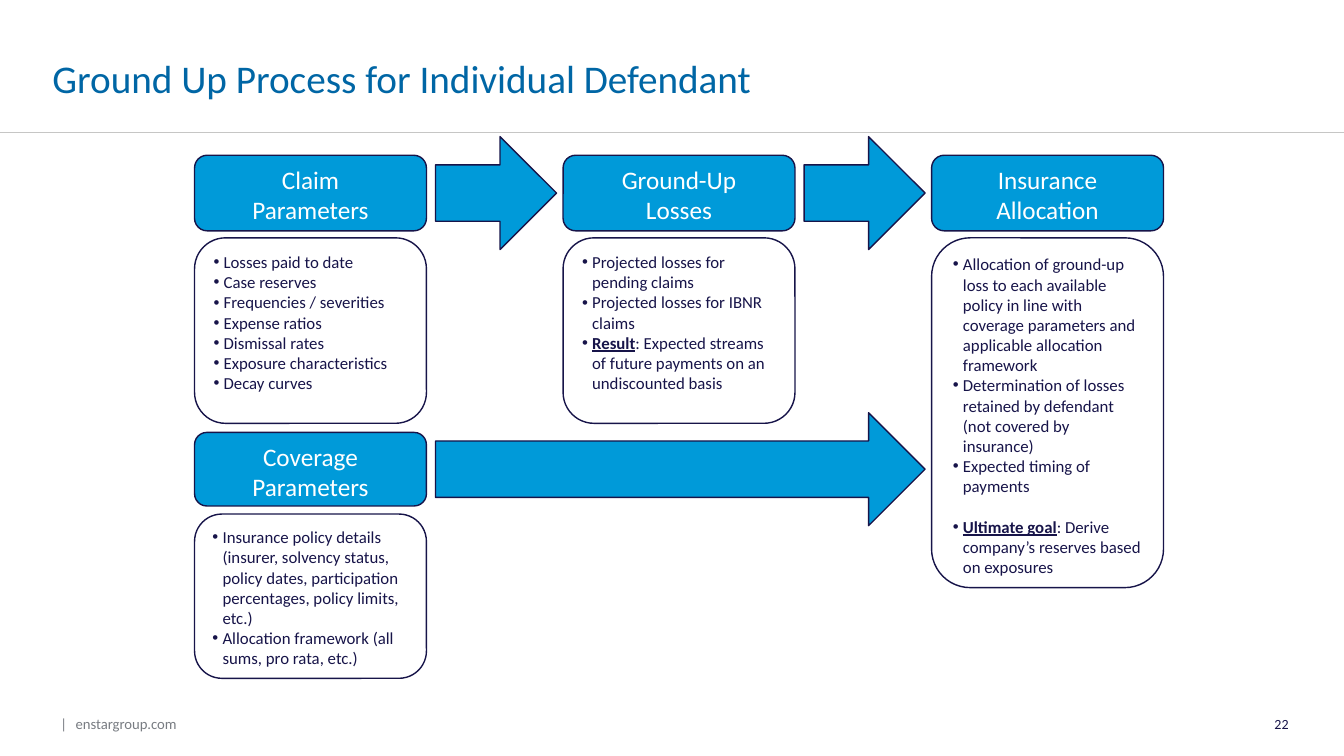
"""Build the slide on the ground-up process for an individual defendant."""
from lxml.etree import SubElement
from pptx import Presentation
from pptx.dml.color import RGBColor
from pptx.enum.shapes import MSO_CONNECTOR as Connector, MSO_SHAPE as Preset
from pptx.enum.text import MSO_ANCHOR as Anchor, PP_ALIGN as Align
from pptx.oxml.ns import qn
from pptx.util import Inches, Pt

WIDTH, HEIGHT = 13.33, 7.5
NAVY, SKY, BLUE, GREY, RULE = "171449", "009AD9", "0066A5", "787C82", "C6C6C5"
COLUMNS = [1.93 + 3.655 * step for step in range(3)]
COLUMN_WIDTH, GAP = 2.3, 0.09
HEADER_TOP, BODY_TOP, HEADER_HEIGHT = 1.54, 2.36, 0.75
COVERAGE_TOP, COVERAGE_HEIGHT, COVERAGE_BODY_TOP = 4.29, 0.73, 5.1
ARROW_WIDTH, ARROW_HEIGHT = 1.2, 1.12

CLAIM_ITEMS = [
    "Losses paid to date", "Case reserves", "Frequencies / severities",
    "Expense ratios", "Dismissal rates", "Exposure characteristics",
    "Decay curves",
]
COVERAGE_ITEMS = [
    "Insurance policy details (insurer, solvency status, policy dates, "
    "participation percentages, policy limits, etc.)",
    "Allocation framework (all sums, pro rata, etc.)",
]
LOSS_ITEMS = [
    "Projected losses for pending claims",
    "Projected losses for IBNR claims",
    ("Result", ": Expected streams of future payments on an undiscounted basis"),
]
ALLOCATION_ITEMS = [
    "Allocation of ground-up loss to each available policy in line with "
    "coverage parameters and applicable allocation framework",
    "Determination of losses retained by defendant (not covered by insurance)",
    "Expected timing of payments",
    ("Ultimate goal", ": Derive company’s reserves based on exposures"),
]


def color(code):
    """Return the colour for a hex string."""
    return RGBColor.from_string(code)


def style(paragraph, size, code, align=Align.LEFT):
    """Set the font and alignment of a paragraph."""
    paragraph.alignment = align
    font = paragraph.font
    font.name, font.size, font.color.rgb = "Calibri", Pt(size), color(code)


def place(box, left, top, width, height):
    """Move and size a shape, in inches."""
    box.left, box.top = Inches(left), Inches(top)
    box.width, box.height = Inches(width), Inches(height)


def set_insets(frame, top=0, bottom=0):
    """Remove the side insets of a text frame and set the others."""
    frame.margin_left = frame.margin_right = 0
    frame.margin_top, frame.margin_bottom = Inches(top), Inches(bottom)


def add_block(slide, preset, left, top, width, height, fill=None):
    """Add an outlined preset shape, filled when a colour is given."""
    block = slide.shapes.add_shape(preset, 0, 0, 0, 0)
    place(block, left, top, width, height)
    block.shadow.inherit = False
    if fill:
        block.fill.solid()
        block.fill.fore_color.rgb = color(fill)
    else:
        block.fill.background()
    block.line.color.rgb = color(NAVY)
    block.line.width = Pt(1)
    return block


def add_header(slide, column, top, height, text):
    """Add a filled heading box with one paragraph per line of text."""
    frame = add_block(slide, Preset.ROUNDED_RECTANGLE, COLUMNS[column], top,
                      COLUMN_WIDTH, height, SKY).text_frame
    frame.text = text
    frame.word_wrap, frame.vertical_anchor = True, Anchor.TOP
    for paragraph in frame.paragraphs:
        style(paragraph, 18, "FFFFFF", Align.CENTER)


def add_list(slide, column, top, height, items):
    """Add an outlined box of bullets, where a pair has an emphasised lead."""
    frame = add_block(slide, Preset.ROUNDED_RECTANGLE, COLUMNS[column], top,
                      COLUMN_WIDTH, height).text_frame
    frame.word_wrap, frame.vertical_anchor = True, Anchor.TOP
    for index, item in enumerate(items):
        paragraph = frame.add_paragraph() if index else frame.paragraphs[0]
        properties = paragraph._p.get_or_add_pPr()
        properties.set("marL", str(Inches(0.1)))
        properties.set("indent", str(-Inches(0.1)))
        SubElement(properties, qn("a:buFont"), typeface="Arial")
        SubElement(properties, qn("a:buChar"), char="•")
        style(paragraph, 12, NAVY)
        if isinstance(item, tuple):
            lead, rest = (paragraph.add_run() for _ in item)
            lead.text, rest.text = item
            lead.font.bold = lead.font.underline = True
        else:
            paragraph.add_run().text = item
    return frame


def add_arrow(slide, column, middle, span=1):
    """Add an arrow from a column across the given number of columns."""
    left = COLUMNS[column] + COLUMN_WIDTH + GAP
    width = ARROW_WIDTH + COLUMNS[column + span - 1] - COLUMNS[column]
    add_block(slide, Preset.RIGHT_ARROW, left, middle - ARROW_HEIGHT / 2,
              width, ARROW_HEIGHT, SKY)


def add_note(slide, left, top, width, height, text, size, code, align, tab=None):
    """Add a small line of text at the foot of the slide."""
    note = slide.shapes.add_textbox(0, 0, 0, 0)
    place(note, left, top, width, height)
    frame = note.text_frame
    set_insets(frame)
    frame.word_wrap, frame.vertical_anchor = True, Anchor.MIDDLE
    paragraph = frame.paragraphs[0]
    if tab:
        stops = SubElement(paragraph._p.get_or_add_pPr(), qn("a:tabLst"))
        SubElement(stops, qn("a:tab"), pos=str(Inches(tab)), algn="l")
    paragraph.add_run().text = text
    style(paragraph, size, code, align)


def add_title(slide, text):
    """Fill the title placeholder and draw the rule below it."""
    title = slide.shapes.title
    place(title, 0.52, 0.39, 9.98, 0.76)
    frame = title.text_frame
    frame.text = text
    set_insets(frame, 0.2, 0.05)
    frame.vertical_anchor = Anchor.TOP
    frame.paragraphs[0].line_spacing = 0.9
    style(frame.paragraphs[0], 28, BLUE)
    rule = slide.shapes.add_connector(Connector.STRAIGHT, 0, Inches(1.31),
                                      Inches(WIDTH), Inches(1.31))
    rule.line.color.rgb, rule.line.width = color(RULE), Pt(0.75)
    SubElement(rule._element.spPr, qn("a:effectLst"))


def main():
    """Build and save the slide."""
    deck = Presentation()
    deck.slide_width, deck.slide_height = Inches(WIDTH), Inches(HEIGHT)
    slide = deck.slides.add_slide(deck.slide_layouts[5])
    add_title(slide, "Ground Up Process for Individual Defendant")

    for column in range(2):
        add_arrow(slide, column, HEADER_TOP + HEADER_HEIGHT / 2)
    add_arrow(slide, 0, COVERAGE_TOP + COVERAGE_HEIGHT / 2, span=2)

    headings = ["Claim\nParameters", "Ground-Up\nLosses", "Insurance\nAllocation"]
    for column, heading in enumerate(headings):
        add_header(slide, column, HEADER_TOP, HEADER_HEIGHT, heading)
    add_header(slide, 0, COVERAGE_TOP, COVERAGE_HEIGHT, "Coverage Parameters")

    add_list(slide, 0, BODY_TOP, 1.84, CLAIM_ITEMS)
    add_list(slide, 0, COVERAGE_BODY_TOP, 1.63, COVERAGE_ITEMS)
    add_list(slide, 1, BODY_TOP, 1.84, LOSS_ITEMS)
    allocation = add_list(slide, 2, BODY_TOP, 3.47, ALLOCATION_ITEMS)
    allocation.paragraphs[-1].space_before = Pt(14.5)

    add_note(slide, 0.6, 7.04, 3.15, 0.28, "|\tenstargroup.com", 10.5, GREY,
             Align.LEFT, tab=0.15)
    add_note(slide, 11.94, 6.98, 0.84, 0.4, "22", 10, NAVY, Align.RIGHT)
    deck.save("out.pptx")


if __name__ == "__main__":
    main()
